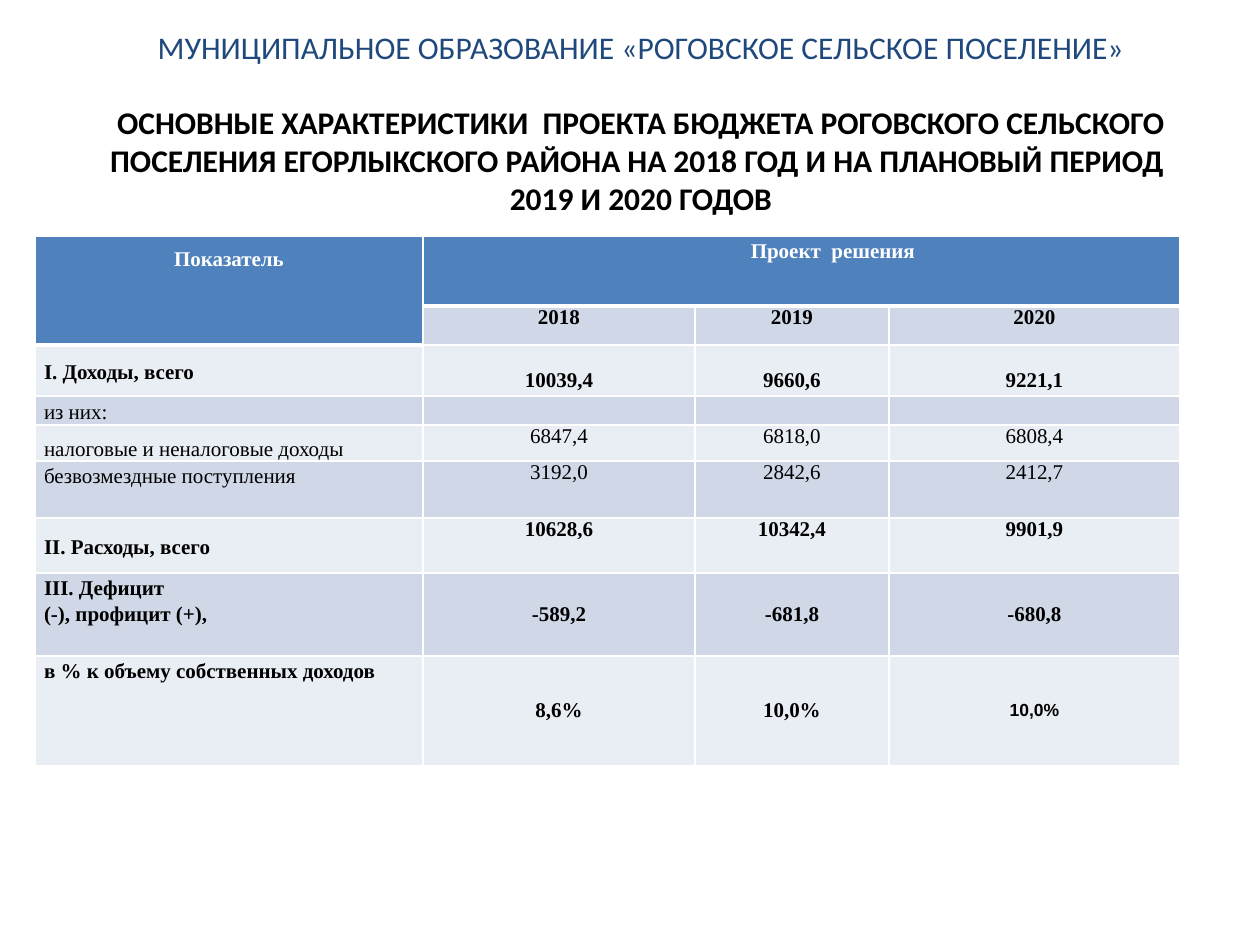
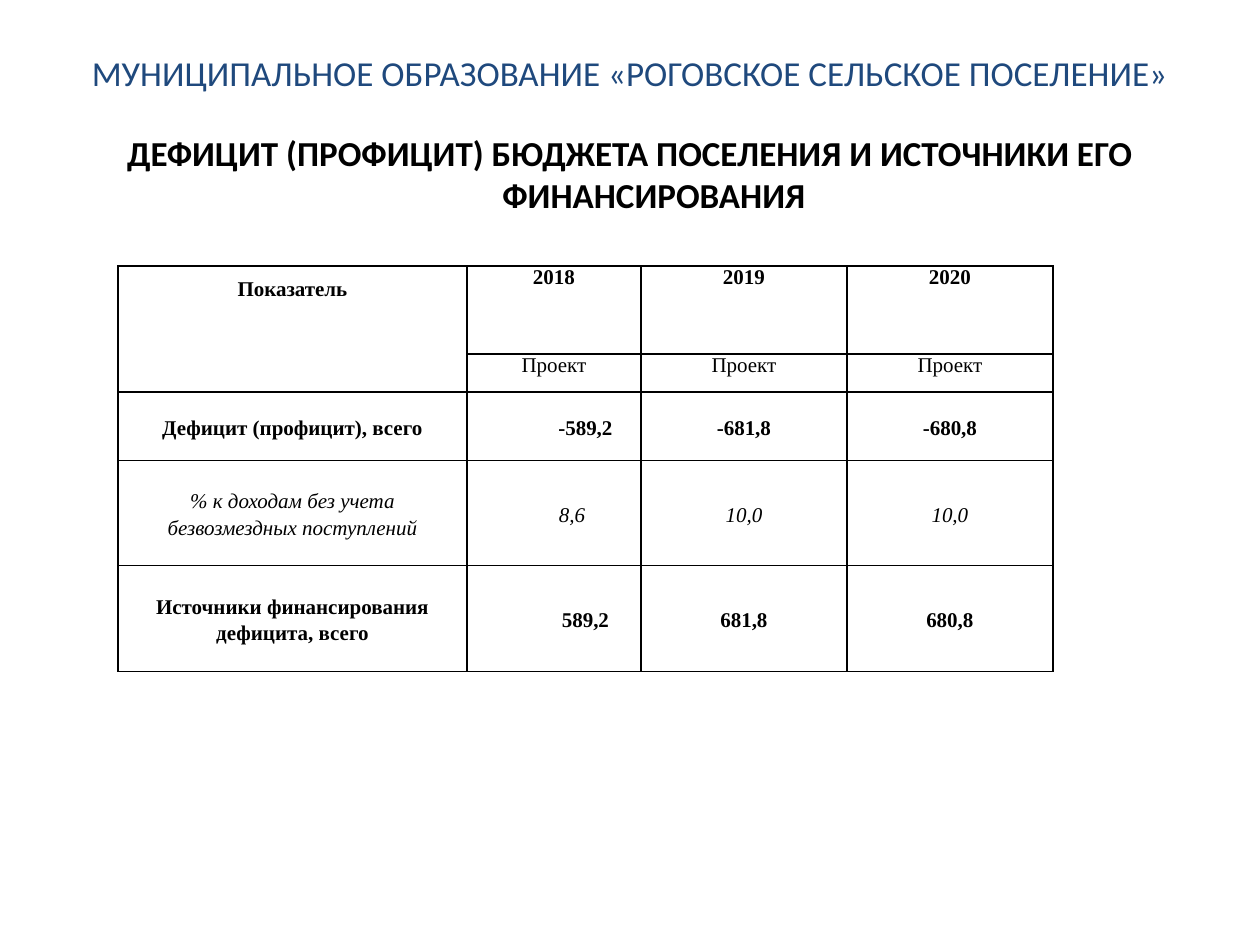
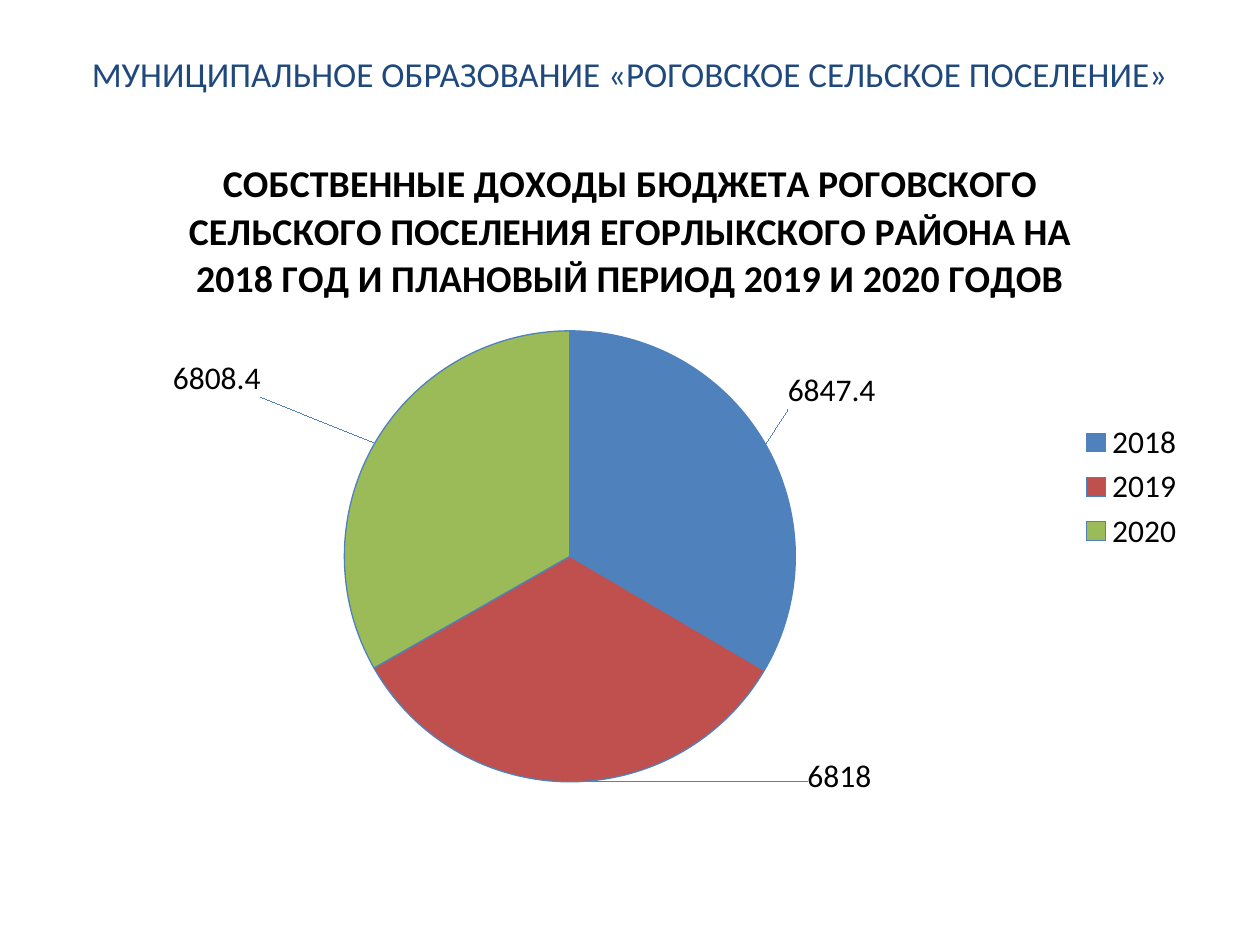
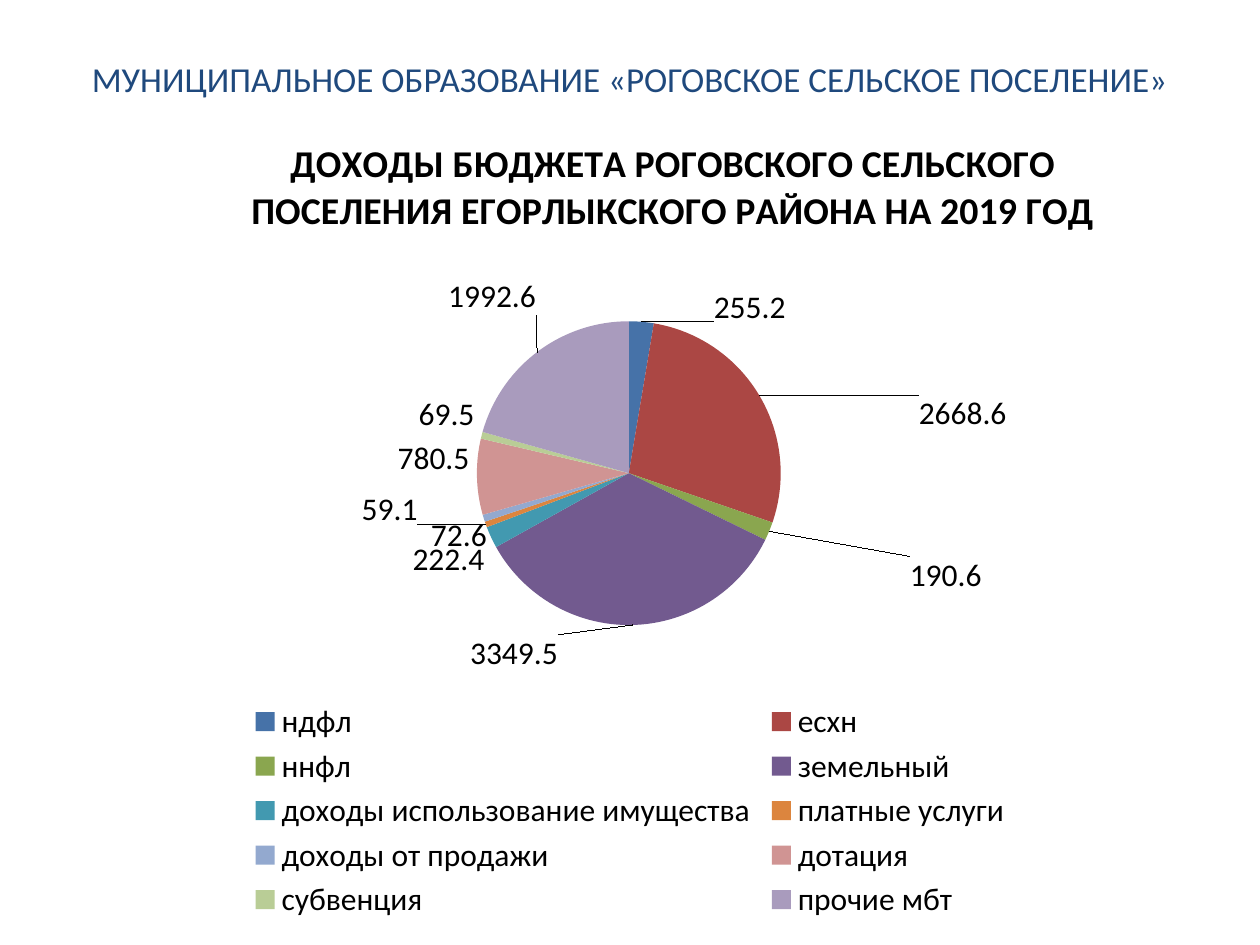
from lxml import etree
from pptx import Presentation
from pptx import util as u
from pptx.chart.data import CategoryChartData
from pptx.dml.color import RGBColor
from pptx.enum import chart as ch, text as t
from pptx.oxml.ns import qn

PX = 7257
hue = RGBColor.from_string
BLACK, WHITE, NAVY, BLUE = "000000", "FFFFFF", "1F497D", "4F81BD"
PALE, LIGHT = "D0D8E8", "E9EDF4"
TOP, MID, LOW = t.MSO_ANCHOR.TOP, t.MSO_ANCHOR.MIDDLE, t.MSO_ANCHOR.BOTTOM
OUT = ch.XL_LABEL_POSITION.OUTSIDE_END


def style(frame, size, color, bold=False, font="Calibri", italic=False,
          align=t.PP_ALIGN.CENTER, gap=1.0, indent=0, left=0):
    for para in frame.paragraphs:
        para.alignment = align
        para.line_spacing = gap
        props = para._p.get_or_add_pPr()
        props.set("marL", str(left * PX))
        props.set("indent", str(indent * PX))
        if not para.runs:
            para._p.get_or_add_endParaRPr().set("sz", str(size * 100))
        for run in para.runs:
            run.font.size = u.Pt(size)
            run.font.name = font
            run.font.bold = bold
            run.font.italic = italic
            run.font.color.rgb = hue(color)


def place(node, slot, edge=True, **sides):
    for old in node.findall(qn("c:layout")):
        node.remove(old)
    frame = etree.Element(qn("c:layout"))
    node.insert(slot, frame)
    manual = etree.SubElement(frame, qn("c:manualLayout"))
    if slot == 0:
        etree.SubElement(manual, qn("c:layoutTarget")).set("val", "inner")
    if edge:
        for mode in ("c:xMode", "c:yMode"):
            etree.SubElement(manual, qn(mode)).set("val", "edge")
    for key, value in sides.items():
        etree.SubElement(manual, qn("c:" + key)).set("val", f"{value:.3f}")


deck = Presentation()
deck.slide_width, deck.slide_height = 1260 * PX, 945 * PX
pages = [deck.slides.add_slide(deck.slide_layouts[6]) for _ in range(4)]

heads = [(74, 27, 39, 18), (63, 38, 68, 20), (63, 38, 70, 20), (63, 38, 81, 20)]
for page, (left, top, high, size) in zip(pages, heads):
    frame = page.shapes.add_textbox(left * PX, top * PX, 1134 * PX, high * PX).text_frame
    frame.word_wrap = True
    frame.vertical_anchor = MID
    frame.text = "МУНИЦИПАЛЬНОЕ ОБРАЗОВАНИЕ «РОГОВСКОЕ СЕЛЬСКОЕ ПОСЕЛЕНИЕ»"
    style(frame, size, NAVY)

topics = [
    (74, 97, 126, 18, 0, "ОСНОВНЫЕ ХАРАКТЕРИСТИКИ  ПРОЕКТА БЮДЖЕТА РОГОВСКОГО СЕЛЬСКОГО "
     "ПОСЕЛЕНИЯ ЕГОРЛЫКСКОГО РАЙОНА НА 2018 ГОД И НА ПЛАНОВЫЙ ПЕРИОД \v2019 И 2020 ГОДОВ"),
    (63, 125, 100, 20, 48, "ДЕФИЦИТ (ПРОФИЦИТ) БЮДЖЕТА ПОСЕЛЕНИЯ И ИСТОЧНИКИ ЕГО ФИНАНСИРОВАНИЯ"),
]
for page, (left, top, high, size, hang, words) in zip(pages, topics):
    frame = page.shapes.add_textbox(left * PX, top * PX, 1134 * PX, high * PX).text_frame
    frame.word_wrap = True
    frame.text = words
    style(frame, size, BLACK, True, left=hang, indent=-hang)

plans = [
    dict(left=35, top=236, cols=[388, 272, 194, 291], edge=WHITE, thick=3,
         align=t.PP_ALIGN.LEFT, merge=[(0, 0, 1, 0), (0, 1, 0, 3)],
         indent={(0, 0): -9, (0, 1): 63}, rows=[
        (70, BLUE, TOP, TOP, 0, True, False, 1.15, ["Показатель", "Проект  решения", "", ""]),
        (39, PALE, TOP, TOP, 0, True, False, 1.0, ["", "2018", "2019", "2020"]),
        (51, LIGHT, MID, TOP, 24, True, False, 1.0, ["I. Доходы, всего", "10039,4", "9660,6", "9221,1"]),
        (28, PALE, MID, TOP, 0, False, False, 1.0, ["из них:", "", "", ""]),
        (36, LIGHT, LOW, TOP, 0, False, False, 1.0,
         ["налоговые и неналоговые доходы", "6847,4", "6818,0", "6808,4"]),
        (57, PALE, TOP, TOP, 0, False, False, 1.0,
         ["безвозмездные поступления", "3192,0", "2842,6", "2412,7"]),
        (55, LIGHT, MID, TOP, 0, True, False, 1.0, ["II. Расходы, всего", "10628,6", "10342,4", "9901,9"]),
        (83, PALE, TOP, MID, 0, True, False, 1.0,
         ["III. Дефицит\n(-), профицит (+),", "-589,2", "-681,8", "-680,8"]),
        (110, LIGHT, TOP, MID, 0, True, False, 1.0,
         ["в % к объему собственных доходов", "8,6%", "10,0%", "10,0%"])]),
    dict(left=118, top=266, cols=[349, 174, 206, 206], edge=BLACK, thick=1,
         align=t.PP_ALIGN.CENTER, merge=[(0, 0, 1, 0)],
         indent={(0, 0): -9, (2, 1): 63, (3, 1): 36, (4, 1): 63}, rows=[
        (88, None, TOP, TOP, 0, True, False, 1.0, ["Показатель", "2018", "2019", "2020"]),
        (35, None, TOP, TOP, 0, False, False, 1.0, ["", "Проект", "Проект", "Проект"]),
        (69, None, MID, MID, 0, True, False, 1.15,
         ["Дефицит (профицит), всего", "-589,2", "-681,8", "-680,8"]),
        (105, None, MID, MID, 0, False, True, 1.15,
         ["% к доходам без учета безвозмездных поступлений", "8,6", "10,0", "10,0"]),
        (106, None, MID, MID, 0, True, False, 1.15,
         ["Источники финансирования дефицита, всего", "589,2", "681,8", "680,8"])]),
]
for page, plan in zip(pages, plans):
    rows, cols = plan["rows"], plan["cols"]
    table = page.shapes.add_table(
        len(rows), len(cols), plan["left"] * PX, plan["top"] * PX,
        sum(cols) * PX, sum(row[0] for row in rows) * PX).table
    table.first_row = table.horz_banding = False
    for r, c, down, over in plan["merge"]:
        table.cell(r, c).merge(table.cell(down, over))
    for c, wide in enumerate(cols):
        table.columns[c].width = wide * PX
    for r, (high, fill, side, anchor, inset, bold, italic, gap, words) in enumerate(rows):
        table.rows[r].height = high * PX
        for c, word in enumerate(words):
            cell = table.cell(r, c)
            cell.margin_left = cell.margin_right = 9 * PX
            cell.margin_top = inset * PX if c else 0
            cell.margin_bottom = 0
            cell.vertical_anchor = anchor if c else side
            cell.text_frame.text = word
            first = (r, c) == (0, 0)
            last = fill and (r, c) == (8, 3)
            style(cell.text_frame, 10 if last else 12, WHITE if fill == BLUE else BLACK,
                  bold, "Arial" if last else "Times New Roman", italic,
                  t.PP_ALIGN.CENTER if c or first else plan["align"],
                  1.5 if first else gap if c else 1.15, plan["indent"].get((r, c), 0))
            props = cell._tc.get_or_add_tcPr()
            rim = 0 if c else 1
            for edge in "LRTB":
                head = (edge == "B" and r <= rim) or (edge == "T" and r == rim + 1)
                line = etree.SubElement(props, qn("a:ln" + edge))
                line.set("w", str(12700 * (plan["thick"] if head else 1)))
                paint = etree.SubElement(line, qn("a:solidFill"))
                etree.SubElement(paint, qn("a:srgbClr")).set("val", plan["edge"])
            if fill:
                cell.fill.solid()
                cell.fill.fore_color.rgb = hue(BLUE if r <= rim else fill)
            else:
                cell.fill.background()

pies = [
    dict(high=716, legend=ch.XL_LEGEND_POSITION.RIGHT, line=BLUE,
         title="СОБСТВЕННЫЕ ДОХОДЫ БЮДЖЕТА РОГОВСКОГО СЕЛЬСКОГО ПОСЕЛЕНИЯ ЕГОРЛЫКСКОГО "
               "РАЙОНА НА 2018 ГОД И ПЛАНОВЫЙ ПЕРИОД 2019 И 2020 ГОДОВ",
         head=(119, 21), disc=(281, 202, 451), key=None, slices=[
        ("2018", 6847.4, BLUE, (16, -31)),
        ("2019", 6818, "C0504D", (271, -32)),
        ("2020", 6808.4, "9BBB59", (-108, -42))]),
    dict(high=798, legend=ch.XL_LEGEND_POSITION.BOTTOM, line=None,
         title="ДОХОДЫ БЮДЖЕТА РОГОВСКОГО СЕЛЬСКОГО ПОСЕЛЕНИЯ ЕГОРЛЫКСКОГО РАЙОНА НА 2019 ГОД",
         head=(181, 0), disc=(414, 192, 304), key=(182, 567, 771, 229), slices=[
        ("ндфл", 255.2, "4672A8", (108, 12)),
        ("есхн", 2668.6, "AB4744", (153, 41)),
        ("ннфл", 190.6, "8AA64F", (134, 22)),
        ("земельный", 3349.5, "725A8F", (-119, 2)),
        ("доходы использование имущества", 222.4, "4299B0", None),
        ("платные услуги", 59.1, "DC853E", (-61, -37)),
        ("доходы от продажи", 72.6, "93A9CF", (10, -4)),
        ("дотация", 780.5, "D09493", (0, -18)),
        ("субвенция", 69.5, "B9CD96", None),
        ("прочие мбт", 1992.6, "A99BBD", (3, -31))]),
]
for page, pie in zip(pages[2:], pies):
    wide, high = 1134, pie["high"]
    data = CategoryChartData()
    data.categories = [part[0] for part in pie["slices"]]
    data.add_series("Series 1", [part[1] for part in pie["slices"]])
    chart = page.shapes.add_chart(
        ch.XL_CHART_TYPE.PIE, 63 * PX, 129 * PX, wide * PX, high * PX, data).chart
    chart.font.size = u.Pt(18)
    chart.font.name = "Calibri"
    chart.font.color.rgb = hue(BLACK)

    chart.has_title = True
    frame = chart.chart_title.text_frame
    frame.text = pie["title"]
    style(frame, 21.6, BLACK, True)
    x, y = pie["head"]
    place(chart.chart_title._element, 1, x=x / wide, y=y / high)

    chart.has_legend = True
    chart.legend.position = pie["legend"]
    chart.legend.include_in_layout = False
    if pie["key"]:
        x, y, w, h = pie["key"]
        place(chart.legend._element, 1, x=x / wide, y=y / high, w=w / wide, h=h / high)

    plot = chart.plots[0]
    plot.vary_by_categories = True
    x, y, disc = pie["disc"]
    area = chart._chartSpace.find(".//" + qn("c:plotArea"))
    place(area, 0, x=x / wide, y=y / high, w=disc / wide, h=disc / high)

    series = plot.series[0]
    if pie["line"]:
        series.format.line.color.rgb = hue(pie["line"])
        series.format.line.width = u.Pt(0.75)
    labels = series.data_labels
    labels.show_value = True
    labels.position = OUT
    for i, (name, value, color, shift) in enumerate(pie["slices"]):
        point = series.points[i]
        point.format.fill.solid()
        point.format.fill.fore_color.rgb = hue(color)
        if pie["line"]:
            point.format.line.color.rgb = hue(pie["line"])
            point.format.line.width = u.Pt(0.75)
        else:
            point.format.line.fill.background()
        if shift:
            point.data_label.position = OUT
            node = series._element.findall(".//" + qn("c:dLbl"))[-1]
            place(node, 1, edge=False, x=shift[0] / wide, y=shift[1] / high)

deck.save("out.pptx")
